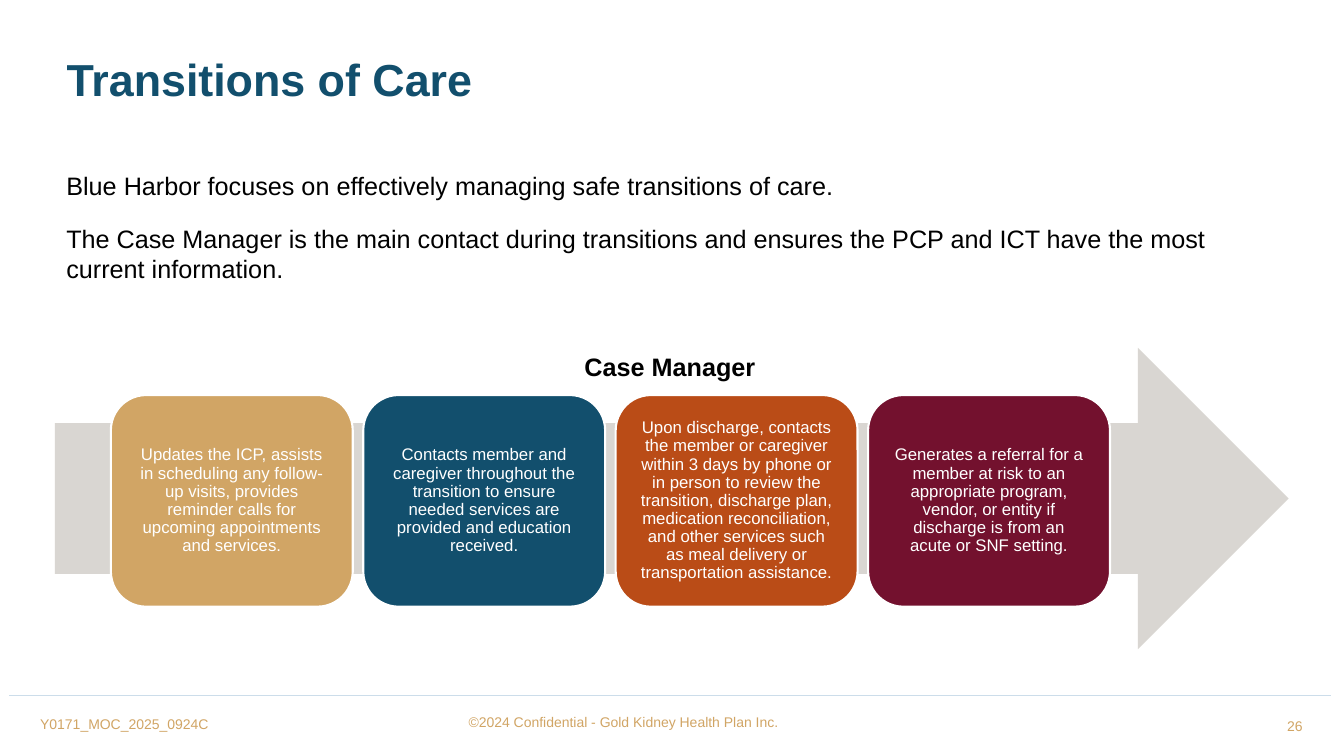
"""Build the Transitions of Care slide."""
from lxml import etree
from pptx import Presentation
from pptx.dml.color import RGBColor
from pptx.enum.shapes import MSO_CONNECTOR, MSO_SHAPE
from pptx.enum.text import MSO_ANCHOR, PP_ALIGN
from pptx.oxml.ns import qn
from pptx.util import Pt

STRAIGHT = MSO_CONNECTOR.STRAIGHT
RIGHT_ARROW, ROUNDED = MSO_SHAPE.RIGHT_ARROW, MSO_SHAPE.ROUNDED_RECTANGLE
TOP, MIDDLE = MSO_ANCHOR.TOP, MSO_ANCHOR.MIDDLE
LEFT, CENTER, RIGHT = PP_ALIGN.LEFT, PP_ALIGN.CENTER, PP_ALIGN.RIGHT

COLORS = {
    "gold": "D1A565", "blue": "124F6D", "orange": "BA4C17", "wine": "73112E",
    "stone": "C9C5BF", "rule": "CCDDEA", "black": "000000", "white": "FFFFFF",
}
BODY = [
    "Blue Harbor focuses on effectively managing safe transitions of care.",
    "The Case Manager is the main contact during transitions and ensures the PCP and ICT "
    "have the most current information.",
]
STEPS = [
    ("gold", "Updates the ICP, assists in scheduling any follow-up visits, provides reminder "
             "calls for upcoming appointments and services."),
    ("blue", "Contacts member and caregiver throughout the transition to ensure needed "
             "services are provided and education received."),
    ("orange", "Upon discharge, contacts the member or caregiver within 3 days by phone or in "
               "person to review the transition, discharge plan, medication reconciliation, "
               "and other services such as meal delivery or transportation assistance."),
    ("wine", "Generates a referral for a member at risk to an appropriate program, vendor, or "
             "entity if discharge is from an acute or SNF setting."),
]
STEP_LEFT, STEP_TOP, STEP_PITCH = 79.2, 282.2, 180.3
STEP_WIDTH, STEP_HEIGHT, STEP_INSET = 172.8, 151.2, 9.6


class SlideBuilder:
    """Hold the slide and its text style, and add elements to it."""

    def __init__(self, slide, font="Arial"):
        self.slide = slide
        self.font = font

    def color(self, name):
        return RGBColor.from_string(COLORS[name])

    def add_paragraphs(self, frame, texts, size, color, bold=False, align=LEFT, anchor=TOP,
                       spacing=1.0, before=0, after=0, wrap=True):
        frame.word_wrap = wrap
        frame.vertical_anchor = anchor
        for index, text in enumerate(texts):
            para = frame.add_paragraph() if index else frame.paragraphs[0]
            para.alignment = align
            para.line_spacing = spacing
            para.space_before = Pt(before if index else 0)
            para.space_after = Pt(after)
            span = para.add_run()
            span.text = text
            span.font.name = self.font
            span.font.size = Pt(size)
            span.font.bold = bold
            span.font.color.rgb = self.color(color)

    def title(self, text, left, top, width, height):
        box = self.slide.shapes.title
        box.left, box.top, box.width, box.height = Pt(left), Pt(top), Pt(width), Pt(height)
        self.add_paragraphs(box.text_frame, [text], 32, "blue", bold=True, spacing=0.9)

    def text(self, texts, left, top, width, height, size, color, **style):
        box = self.slide.shapes.add_textbox(Pt(left), Pt(top), Pt(width), Pt(height))
        self.add_paragraphs(box.text_frame, texts, size, color, **style)

    def shape(self, kind, left, top, width, height, fill):
        shape = self.slide.shapes.add_shape(kind, Pt(left), Pt(top), Pt(width), Pt(height))
        shape.shadow.inherit = False
        shape.fill.solid()
        shape.fill.fore_color.rgb = self.color(fill)
        shape.line.fill.background()
        return shape

    def arrow(self, left, top, width, height, fill, opacity):
        arrow = self.shape(RIGHT_ARROW, left, top, width, height, fill)
        tint = arrow._element.spPr.find(qn("a:solidFill")).find(qn("a:srgbClr"))
        etree.SubElement(tint, qn("a:alpha")).set("val", str(opacity * 1000))

    def step(self, text, left, fill):
        box = self.shape(ROUNDED, left, STEP_TOP, STEP_WIDTH, STEP_HEIGHT, fill)
        box.line.color.rgb = self.color("white")
        box.line.width = Pt(1.5)
        frame = box.text_frame
        frame.margin_left = frame.margin_right = Pt(STEP_INSET)
        frame.margin_top = frame.margin_bottom = Pt(STEP_INSET)
        self.add_paragraphs(frame, [text], 12, "white", align=CENTER, anchor=MIDDLE, spacing=0.9)

    def rule(self, left, right, top, color, width):
        line = self.slide.shapes.add_connector(STRAIGHT, Pt(left), Pt(top), Pt(right), Pt(top))
        line.line.color.rgb = self.color(color)
        line.line.width = Pt(width)
        etree.SubElement(line._element.spPr, qn("a:effectLst"))


def main():
    deck = Presentation()
    deck.slide_width, deck.slide_height = Pt(960), Pt(540)
    page = SlideBuilder(deck.slides.add_slide(deck.slide_layouts[5]))

    page.rule(6.5, 951, 496.8, "rule", 0.5)
    page.text(["26"], 755.3, 504.7, 182.2, 27.4, 10, "gold", align=RIGHT, anchor=MIDDLE)
    page.text(["©2024 Confidential - Gold Kidney Health Plan Inc."],
              327.6, 506.2, 300.2, 19.4, 10, "gold", anchor=MIDDLE)
    page.title("Transitions of Care", 40.3, 37.4, 802, 48.2)
    page.text(BODY, 40.3, 118.1, 858.2, 106.6, 18, "black", before=10, after=6)

    page.arrow(39.2, 248.4, 881.3, 215.3, "stone", 70)
    for index, (fill, text) in enumerate(STEPS):
        page.step(text, STEP_LEFT + index * STEP_PITCH, fill)
    page.text(["Case Manager"], 410.4, 247.7, 137.5, 28.8, 18, "black", bold=True, wrap=False)
    page.text(["Y0171_MOC_2025_0924C"], 21.6, 507.6, 135.4, 19.4, 10, "gold", wrap=False)

    deck.save("out.pptx")


if __name__ == "__main__":
    main()
